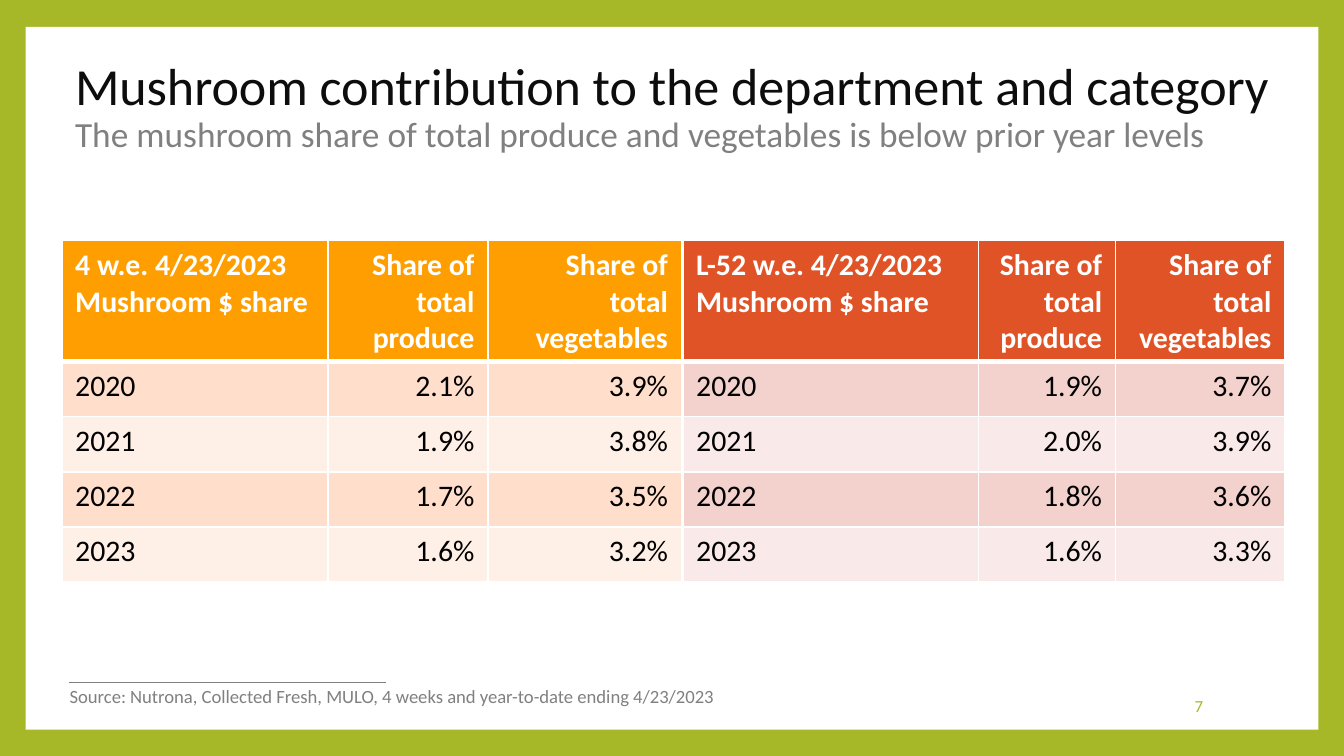
from lxml import etree
from pptx import Presentation
from pptx.dml.color import RGBColor
from pptx.enum.shapes import MSO_CONNECTOR, MSO_SHAPE
from pptx.enum.text import MSO_ANCHOR, PP_ALIGN
from pptx.oxml.ns import qn
from pptx.util import Inches, Pt

COLORS = {
    "green": "A6B727", "white": "FFFFFF", "black": "000000",
    "title": "0D0D0D", "gray": "808080",
    "orange": "FE9E00", "orange_band": "FFDFCC", "orange_light": "FFF0E7",
    "red": "DF5327", "red_band": "F3D1CD", "red_light": "F9E9E8",
}


def style_run(run, size, color, bold=False):
    run.font.name = "Calibri"
    run.font.size = Pt(size)
    run.font.bold = bold
    run.font.color.rgb = RGBColor.from_string(COLORS[color])


def add_borders(cell, bottom_width):
    """Draw white borders, 1 pt wide except for the bottom one."""
    properties = cell._tc.get_or_add_tcPr()
    widths = {"lnL": 1, "lnR": 1, "lnT": 1, "lnB": bottom_width}
    for position, (side, width) in enumerate(widths.items()):
        border = etree.Element(qn(f"a:{side}"), w=str(Pt(width)))
        fill = etree.SubElement(border, qn("a:solidFill"))
        etree.SubElement(fill, qn("a:srgbClr"), val=COLORS["white"])
        properties.insert(position, border)


# Widescreen, 16:9
prs = Presentation()
prs.slide_width = Inches(10)
prs.slide_height = prs.slide_width * 9 // 16
slide = prs.slides.add_slide(prs.slide_layouts[6])
slide.background.fill.solid()
slide.background.fill.fore_color.rgb = RGBColor.from_string(COLORS["green"])

# White page inside the green frame
page = slide.shapes.add_shape(
    MSO_SHAPE.RECTANGLE, Inches(0.19), Inches(0.2), Inches(9.62), Inches(5.23))
page.shadow.inherit = False
page.fill.solid()
page.fill.fore_color.rgb = RGBColor.from_string(COLORS["white"])
page.line.fill.background()

source_rule = slide.shapes.add_connector(
    MSO_CONNECTOR.STRAIGHT, Inches(0.51), Inches(5.08), Inches(2.87), Inches(5.08))
source_rule.line.color.rgb = RGBColor.from_string(COLORS["gray"])
source_rule.line.width = Pt(0.79)
etree.SubElement(source_rule._element.spPr, qn("a:effectLst"))

# Title and subtitle
heading = slide.shapes.add_textbox(
    Inches(0.46), Inches(0.53), Inches(9.58), Inches(0.54)).text_frame
heading.word_wrap = True
heading.vertical_anchor = MSO_ANCHOR.MIDDLE
heading_lines = heading.paragraphs[0]
heading_lines.text = (
    "Mushroom contribution to the department and category\v"
    "The mushroom share of total produce and vegetables is below prior year levels")
heading_lines.line_spacing = 0.9
title, subtitle = heading_lines.runs
style_run(title, 27.9, "title")
style_run(subtitle, 18.9, "gray")

# Share tables: period, left edge, column widths, color family, yearly shares
share_tables = [
    ("4 w.e. 4/23/2023", 0.46, (1.98, 1.19, 1.44), "orange",
     [("2020", "2.1%", "3.9%"), ("2021", "1.9%", "3.8%"),
      ("2022", "1.7%", "3.5%"), ("2023", "1.6%", "3.2%")]),
    ("L-52 w.e. 4/23/2023", 5.08, (2.2, 1.02, 1.26), "red",
     [("2020", "1.9%", "3.7%"), ("2021", "2.0%", "3.9%"),
      ("2022", "1.8%", "3.6%"), ("2023", "1.6%", "3.3%")]),
]
for period, left, widths, family, shares in share_tables:
    rows = [(f"{period}\vMushroom $ share",
             "Share of total produce", "Share of total vegetables"), *shares]
    table = slide.shapes.add_table(
        len(rows), len(widths), Inches(left), Inches(1.79),
        Inches(sum(widths)), Inches(2.52)).table
    for column, width in zip(table.columns, widths):
        column.width = Inches(width)
    for r, row in enumerate(rows):
        is_header = r == 0
        table.rows[r].height = Inches(0.88 if is_header else 0.41)
        shade = family if is_header else f"{family}_{'band' if r % 2 else 'light'}"
        for c, label in enumerate(row):
            cell = table.cell(r, c)
            cell.fill.solid()
            cell.fill.fore_color.rgb = RGBColor.from_string(COLORS[shade])
            add_borders(cell, 3 if is_header else 1)
            paragraph = cell.text_frame.paragraphs[0]
            paragraph.text = label
            paragraph.alignment = PP_ALIGN.RIGHT if c else PP_ALIGN.LEFT
            for run in paragraph.runs:
                style_run(run, 16, "white" if is_header else "black", is_header)

# Footer
source = slide.shapes.add_textbox(
    Inches(0.42), Inches(5.05), Inches(5.14), Inches(0.27)).text_frame
source.text = ("Source: Nutrona, Collected Fresh, MULO, "
               "4 weeks and year-to-date ending 4/23/2023")
style_run(source.paragraphs[0].runs[0], 10, "gray")

page_number = slide.shapes.add_textbox(
    Inches(7.65), Inches(5.1), Inches(1.4), Inches(0.3)).text_frame
page_number.word_wrap = True
page_number.vertical_anchor = MSO_ANCHOR.MIDDLE
page_number.text = "7"
page_number.paragraphs[0].alignment = PP_ALIGN.RIGHT
style_run(page_number.paragraphs[0].runs[0], 9, "green")

prs.save("out.pptx")
